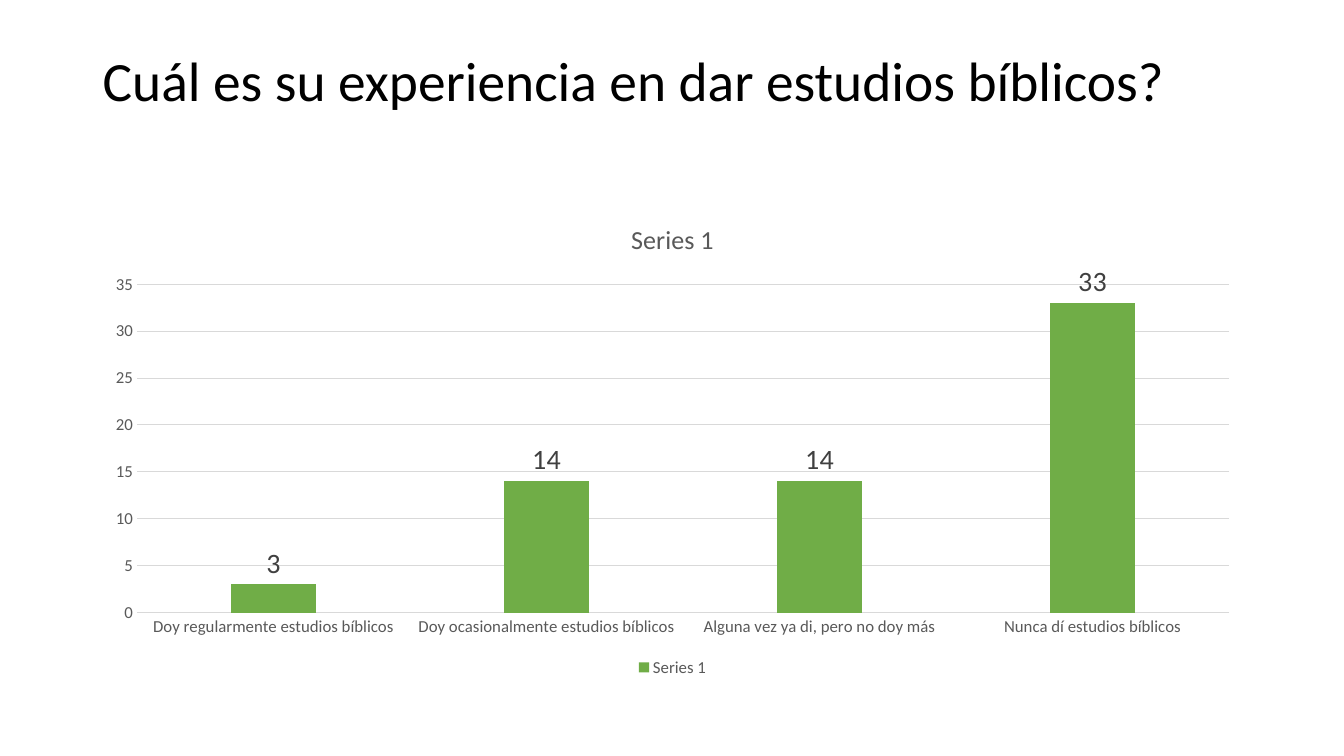
"""Build a slide with a column chart on experience in giving Bible studies."""
import pptx
import pptx.chart.data
import pptx.dml.color
import pptx.enum.chart
import pptx.enum.text
import pptx.util

Inches = pptx.util.Inches
Pt = pptx.util.Pt
RGBColor = pptx.dml.color.RGBColor

FACE = "Calibri"
BLACK = RGBColor(0x00, 0x00, 0x00)
DARK = RGBColor(0x40, 0x40, 0x40)
GRAY = RGBColor(0x59, 0x59, 0x59)
PALE = RGBColor(0xD9, 0xD9, 0xD9)
GREEN = RGBColor(0x70, 0xAD, 0x47)

LEFT, WIDTH = Inches(0.92), Inches(11.5)
SERIES = "Series 1"
COUNTS = {
    "Doy regularmente estudios bíblicos": 3,
    "Doy ocasionalmente estudios bíblicos": 14,
    "Alguna vez ya di, pero no doy más": 14,
    "Nunca dí estudios bíblicos": 33,
}


def set_font(font, size, color):
    """Give a font its face, size and color."""
    font.name = FACE
    font.size = Pt(size)
    font.bold = False
    font.color.rgb = color


def set_line(line):
    """Draw a thin pale line."""
    line.color.rgb = PALE
    line.width = Pt(0.75)


def add_title(slide, text):
    """Add the slide title."""
    box = slide.shapes.add_textbox(LEFT, Inches(0.4), WIDTH, Inches(1.45))
    frame = box.text_frame
    frame.word_wrap = True
    frame.vertical_anchor = pptx.enum.text.MSO_ANCHOR.MIDDLE
    frame.margin_bottom = Inches(0.65)
    frame.text = text
    line = frame.paragraphs[0]
    line.line_spacing = 0.9
    set_font(line.runs[0].font, 39.6, BLACK)


def style_axes(chart):
    """Style both axes and the grid."""
    marks = pptx.enum.chart.XL_TICK_MARK
    for axis in (chart.category_axis, chart.value_axis):
        axis.major_tick_mark = marks.NONE
        axis.minor_tick_mark = marks.NONE
        set_font(axis.tick_labels.font, 12, GRAY)
    set_line(chart.category_axis.format.line)
    scale = chart.value_axis
    scale.format.line.fill.background()
    scale.minimum_scale, scale.maximum_scale, scale.major_unit = 0, 35, 5
    set_line(scale.major_gridlines.format.line)


def style_bars(plot):
    """Style the columns and their value labels."""
    plot.gap_width = 219
    plot.overlap = -27
    plot.vary_by_categories = False
    bars = plot.series[0]
    bars.format.fill.solid()
    bars.format.fill.fore_color.rgb = GREEN
    labels = bars.data_labels
    labels.show_value = True
    labels.position = pptx.enum.chart.XL_LABEL_POSITION.OUTSIDE_END
    set_font(labels.font, 20, DARK)


def add_bars(slide):
    """Add the column chart with its title and legend."""
    data = pptx.chart.data.CategoryChartData()
    data.categories = list(COUNTS)
    data.add_series(SERIES, list(COUNTS.values()))
    kind = pptx.enum.chart.XL_CHART_TYPE.COLUMN_CLUSTERED
    chart = slide.shapes.add_chart(
        kind, LEFT, Inches(2), WIDTH, Inches(4.76), data).chart
    set_font(chart.font, 10, BLACK)
    chart.has_title = True
    head = chart.chart_title.text_frame
    head.text = SERIES
    set_font(head.paragraphs[0].runs[0].font, 18.6, GRAY)
    chart.has_legend = True
    chart.legend.position = pptx.enum.chart.XL_LEGEND_POSITION.BOTTOM
    chart.legend.include_in_layout = False
    set_font(chart.legend.font, 12, GRAY)
    style_axes(chart)
    style_bars(chart.plots[0])


def main():
    """Build and save the slide."""
    deck = pptx.Presentation()
    deck.slide_width = Inches(13.33)
    deck.slide_height = Inches(7.5)
    slide = deck.slides.add_slide(deck.slide_layouts[6])
    add_title(slide, "Cuál es su experiencia en dar estudios bíblicos?")
    add_bars(slide)
    deck.save("out.pptx")


if __name__ == "__main__":
    main()
